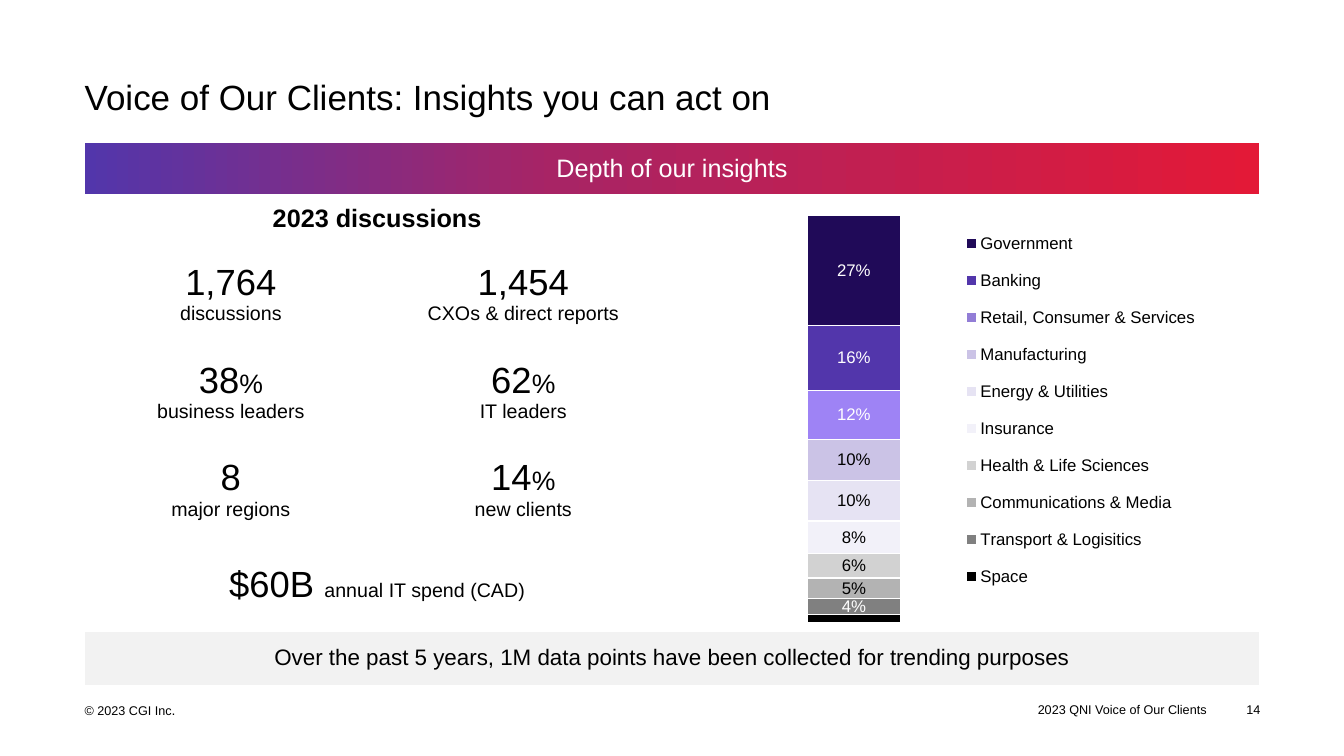
from copy import deepcopy

from lxml.etree import SubElement
from pptx import Presentation
from pptx.chart.data import CategoryChartData
from pptx.dml.color import RGBColor
from pptx.enum.chart import XL_CHART_TYPE, XL_LABEL_POSITION, XL_LEGEND_POSITION
from pptx.enum.text import MSO_ANCHOR, MSO_AUTO_SIZE, PP_ALIGN
from pptx.oxml.ns import qn
from pptx.util import Inches, Pt

BLACK = RGBColor(0x00, 0x00, 0x00)
WHITE = RGBColor(0xFF, 0xFF, 0xFF)
RED = RGBColor(0xE3, 0x19, 0x37)
MAGENTA = RGBColor(0xA8, 0x24, 0x65)
PURPLE = RGBColor(0x52, 0x36, 0xAB)
DEEP_PURPLE = RGBColor(0x20, 0x0A, 0x58)
SOFT_PURPLE = RGBColor(0x92, 0x7D, 0xD6)
BRIGHT_PURPLE = RGBColor(0x9E, 0x83, 0xF5)
LILAC = RGBColor(0xCB, 0xC3, 0xE6)
PALE_LILAC = RGBColor(0xE6, 0xE3, 0xF3)
MIST = RGBColor(0xF2, 0xF1, 0xF9)
LIGHT_GREY = RGBColor(0xD2, 0xD2, 0xD2)
MID_GREY = RGBColor(0xB3, 0xB3, 0xB3)
DARK_GREY = RGBColor(0x80, 0x80, 0x80)
BAND_GREY = RGBColor(0xF2, 0xF2, 0xF2)

PLAIN_TABLE_STYLE = "{2D5ABB26-0587-4C30-8999-92F81FD0307C}"
LEFT = 6.3
FOOTER_TOP = 92.8

# Name, share, fill, label colour (None for no label), bottom to top
INDUSTRIES = [
    ("Space", 0.02, BLACK, None),
    ("Transport & Logisitics", 0.04, DARK_GREY, WHITE),
    ("Communications & Media", 0.05, MID_GREY, BLACK),
    ("Health & Life Sciences", 0.06, LIGHT_GREY, BLACK),
    ("Insurance", 0.08, MIST, BLACK),
    ("Energy & Utilities", 0.10, PALE_LILAC, BLACK),
    ("Manufacturing", 0.10, LILAC, BLACK),
    ("Retail, Consumer & Services", 0.12, SOFT_PURPLE, WHITE),
    ("Banking", 0.16, PURPLE, WHITE),
    ("Government", 0.27, DEEP_PURPLE, WHITE),
]

# Number, unit, caption
FIGURES = [
    [("1,764", "", "discussions"), ("1,454", "", "CXOs & direct reports")],
    [("38", "%", "business leaders"), ("62", "%", "IT leaders")],
    [("8", "", "major regions"), ("14", "%", "new clients")],
]


def apply(target, **values):
    for name, value in values.items():
        setattr(target, name, value)


class InsightsSlide:
    """Slide with one house style; boxes are percentages of the slide's size."""

    font_name = "Arial"

    def __init__(self, presentation):
        self.presentation = presentation
        self.slide = presentation.slides.add_slide(presentation.slide_layouts[5])

    def across(self, share):
        return round(self.presentation.slide_width * share / 100)

    def down(self, share):
        return round(self.presentation.slide_height * share / 100)

    def box(self, left, top, width, height):
        return self.across(left), self.down(top), self.across(width), self.down(height)

    def style_font(self, font, size, color=BLACK, bold=False):
        apply(font, name=self.font_name, size=Pt(size), bold=bold)
        font.color.rgb = color

    def add_lines(self, frame, lines, align, color=BLACK, bold=False):
        """Fill a text frame; each line is a list of (text, size) runs."""
        for index, line in enumerate(lines):
            paragraph = frame.add_paragraph() if index else frame.paragraphs[0]
            paragraph.alignment = align
            for text, size in line:
                run = paragraph.add_run()
                run.text = text
                self.style_font(run.font, size, color, bold)

    def fill_frame(self, frame, runs, align, anchor, wrap):
        apply(frame, margin_left=0, margin_right=0, margin_top=0, margin_bottom=0,
              vertical_anchor=anchor, word_wrap=wrap, auto_size=MSO_AUTO_SIZE.NONE)
        self.add_lines(frame, [runs], align)

    def title(self, text, box):
        title = self.slide.shapes.title
        left, top, width, height = self.box(*box)
        apply(title, left=left, top=top, width=width, height=height)
        self.fill_frame(title.text_frame, [(text, 25)], PP_ALIGN.LEFT, MSO_ANCHOR.TOP, True)

    def text(self, runs, box, align=PP_ALIGN.LEFT, anchor=MSO_ANCHOR.TOP, wrap=False):
        shape = self.slide.shapes.add_textbox(*self.box(*box))
        self.fill_frame(shape.text_frame, runs, align, anchor, wrap)

    def table(self, left, top, columns, rows):
        frame = self.slide.shapes.add_table(
            len(rows), len(columns), *self.box(left, top, sum(columns), sum(rows)))
        table = frame.table
        apply(table, first_row=False, horz_banding=False)
        table._tbl.tblPr.find(qn("a:tableStyleId")).text = PLAIN_TABLE_STYLE
        for column, share in zip(table.columns, columns):
            column.width = self.across(share)
        for row, share in zip(table.rows, rows):
            row.height = self.down(share)
        for cell in table.iter_cells():
            cell.fill.background()
        return table

    def cell(self, cell, lines, padding=0.08, color=BLACK, bold=False):
        apply(cell, vertical_anchor=MSO_ANCHOR.MIDDLE,
              margin_top=Inches(padding), margin_bottom=Inches(padding))
        self.add_lines(cell.text_frame, lines, PP_ALIGN.CENTER, color, bold)

    def gradient(self, cell, stops, angle):
        fill = cell.fill
        fill.gradient()
        fill.gradient_angle = angle
        stop_list = cell._tc.tcPr.find(".//" + qn("a:gsLst"))
        for _ in range(len(stops) - len(stop_list)):
            stop_list.append(deepcopy(stop_list[0]))
        for stop, (position, color) in zip(fill.gradient_stops, stops):
            stop.color.rgb = color
            stop.position = position

    def chart_layout(self, layout, **settings):
        """Place a chart part by shares x, y, w and h of the chart."""
        manual = SubElement(layout, qn("c:manualLayout"))
        for tag, value in settings.items():
            SubElement(manual, qn("c:" + tag)).set("val", str(value))

    def stacked_chart(self, series_rows, box):
        data = CategoryChartData(number_format="0%")
        data.categories = ["1"]
        for name, share, _, _ in series_rows:
            data.add_series(name, [share])
        chart = self.slide.shapes.add_chart(
            XL_CHART_TYPE.COLUMN_STACKED_100, *self.box(*box), data).chart
        apply(chart, has_title=False, has_legend=True)
        self.style_font(chart.font, 12)
        apply(chart.value_axis, visible=False, has_major_gridlines=False, maximum_scale=1)
        chart.category_axis.visible = False
        plot = chart.plots[0]
        apply(plot, gap_width=100, overlap=100, vary_by_categories=False)
        for series, (_, _, color, label_color) in zip(plot.series, series_rows):
            self.paint_bar(series.format, color)
            if label_color is not None:
                labels = series.data_labels
                apply(labels, show_value=True, number_format="0%",
                      number_format_is_linked=False, position=XL_LABEL_POSITION.CENTER)
                self.style_font(labels.font, 12, label_color)
        apply(chart.legend, position=XL_LEGEND_POSITION.RIGHT, include_in_layout=False)
        self.style_font(chart.legend.font, 12)
        self.chart_layout(chart.legend._element.get_or_add_layout(),
                          xMode="edge", yMode="edge", x=0.49, y=0.06, w=0.49, h=0.86)
        plot_area = chart._chartSpace.chart.plotArea
        plot_layout = plot_area.find(qn("c:layout"))
        if plot_layout is None:
            plot_layout = SubElement(plot_area, qn("c:layout"))
            plot_area.insert(0, plot_layout)
        self.chart_layout(plot_layout, layoutTarget="inner",
                          xMode="edge", yMode="edge", x=0.12, y=0.06, w=0.36, h=0.9)
        return chart

    def paint_bar(self, bar_format, color):
        bar_format.fill.solid()
        bar_format.fill.fore_color.rgb = color
        bar_format.line.color.rgb = WHITE
        bar_format.line.width = Pt(1)


def main():
    presentation = Presentation()
    apply(presentation, slide_width=Inches(13.33), slide_height=Inches(7.5))
    page = InsightsSlide(presentation)
    page.title("Voice of Our Clients: Insights you can act on", (LEFT, 10, 87.6, 7.7))

    table = page.table(LEFT, 18.93, [21.76, 21.76, 43.88],
                       [6.67, 6.8, 12.93, 12.93, 12.93, 12.4, 7.07])
    for first, last in [((0, 0), (0, 2)), ((1, 0), (1, 1)), ((1, 2), (5, 2)),
                        ((5, 0), (5, 1)), ((6, 0), (6, 2))]:
        table.cell(*first).merge(table.cell(*last))
    banner, closing = table.cell(0, 0), table.cell(6, 0)
    page.cell(banner, [[("Depth of our insights", 18)]], 0.1, WHITE)
    page.gradient(banner, [(0, RED), (0.6, MAGENTA), (1, PURPLE)], 180)
    page.cell(table.cell(1, 0), [[("2023 discussions", 18)]], bold=True)
    for row, figures in enumerate(FIGURES, start=2):
        for column, (number, unit, caption) in enumerate(figures):
            top_line = [(number, 26)] + ([(unit, 19)] if unit else [])
            page.cell(table.cell(row, column), [top_line, [(caption, 14)]])
    page.cell(table.cell(5, 0), [[("$60B ", 26), ("annual IT spend (CAD)", 14)]])
    page.cell(closing, [[("Over the past 5 years, 1M data points have been collected "
                          "for trending purposes", 16)]], 0.1)
    closing.text_frame.paragraphs[0].line_spacing = 0.9
    closing.fill.solid()
    closing.fill.fore_color.rgb = BAND_GREY

    chart = page.stacked_chart(INDUSTRIES, (51.9, 24.93, 38.8, 59.87))
    page.paint_bar(chart.plots[0].series[7].points[0].format, BRIGHT_PURPLE)

    page.text([("© 2023 CGI Inc", 9), (".", 10)], (LEFT, FOOTER_TOP, 15.75, 2))
    page.text([("2023 QNI Voice of Our Clients", 9)], (76.97, FOOTER_TOP, 13.05, 2),
              PP_ALIGN.CENTER, MSO_ANCHOR.MIDDLE)
    page.text([("14", 9)], (91.6, FOOTER_TOP, 2.18, 2), PP_ALIGN.RIGHT, wrap=True)
    presentation.save("out.pptx")


if __name__ == "__main__":
    main()
